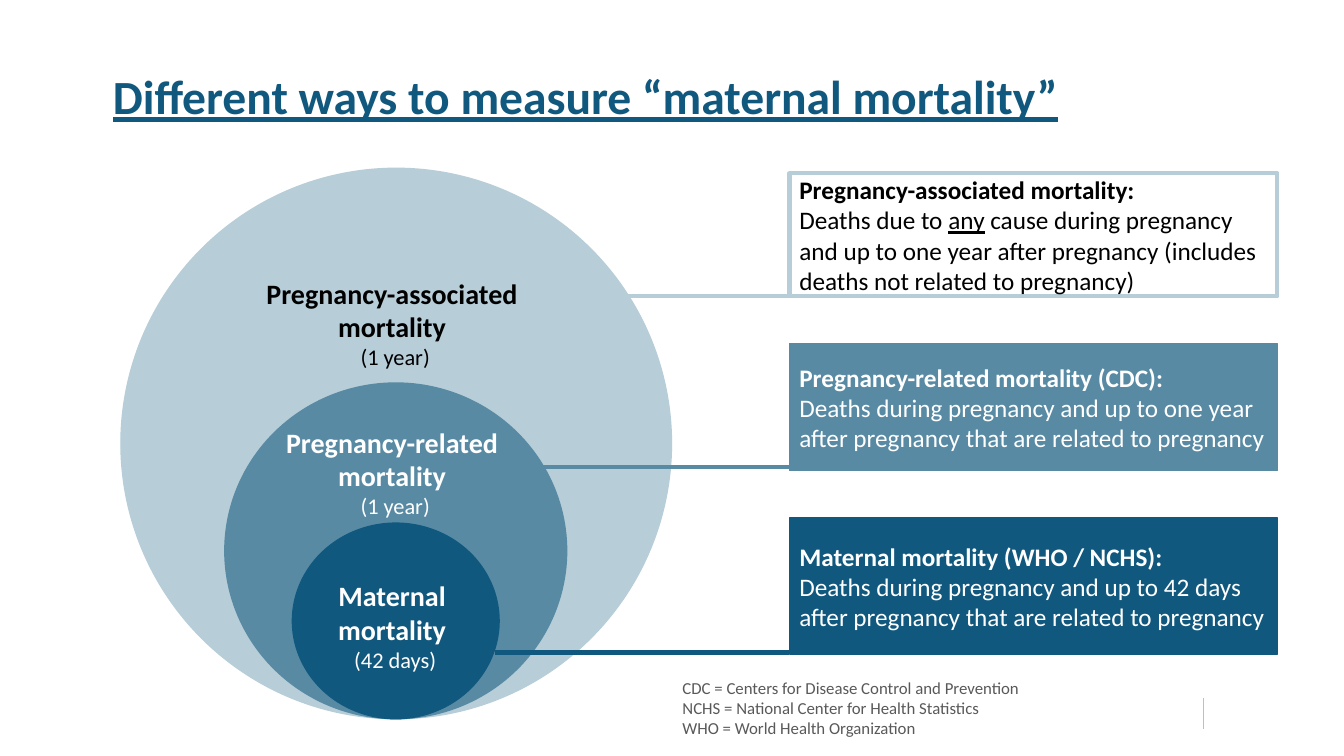
from dataclasses import dataclass

from lxml import etree
from pptx import Presentation
from pptx.dml.color import RGBColor
from pptx.enum.shapes import MSO_CONNECTOR, MSO_SHAPE
from pptx.enum.text import MSO_ANCHOR, MSO_AUTO_SIZE, PP_ALIGN
from pptx.oxml.ns import qn
from pptx.util import Pt

PX = 9144
OVAL, RECT = MSO_SHAPE.OVAL, MSO_SHAPE.RECTANGLE
LINE = MSO_CONNECTOR.STRAIGHT
MIDDLE, TOP = MSO_ANCHOR.MIDDLE, MSO_ANCHOR.TOP
LEFT, CENTER = PP_ALIGN.LEFT, PP_ALIGN.CENTER
FIXED = MSO_AUTO_SIZE.NONE


@dataclass(frozen=True)
class Theme:
    """Hold the colours, font and type sizes of the slide."""
    pale: str = "B7CDD8"
    mid: str = "588AA4"
    deep: str = "10587D"
    black: str = "000000"
    white: str = "FFFFFF"
    gray: str = "595959"
    rule: str = "BFBFBF"
    font: str = "Calibri"
    title: int = 34
    label: int = 20
    span: int = 16
    body: int = 18
    note: int = 12


THEME = Theme()


def emu(box):
    """Turn px lengths into EMU."""
    return [n * PX for n in box]


def style(para, size, color, bold=False, align=LEFT):
    """Format one paragraph."""
    para.alignment = align
    font = para.font
    font.name, font.size, font.bold = THEME.font, Pt(size), bold
    font.color.rgb = RGBColor.from_string(color)


def write(frame, rows, color, align=LEFT, anchor=TOP, wrap=True):
    """Fill a frame with rows of runs, size and weight."""
    frame.word_wrap, frame.vertical_anchor = wrap, anchor
    for i, (parts, size, bold) in enumerate(rows):
        para = frame.add_paragraph() if i else frame.paragraphs[0]
        style(para, size, color, bold, align)
        for text, under in parts:
            run = para.add_run()
            run.text = text
            if under:
                run.font.underline = True


def plain(text):
    """Give a row's runs for text without underline."""
    return [(text, False)]


def shape(slide, kind, box, fill, edge, width=1):
    """Add a flat preset shape."""
    item = slide.shapes.add_shape(kind, *emu(box))
    item.shadow.inherit = False
    if fill:
        item.fill.solid()
        item.fill.fore_color.rgb = RGBColor.from_string(fill)
    else:
        item.fill.background()
    item.line.color.rgb = RGBColor.from_string(edge)
    item.line.width = Pt(width)
    return item


def link(slide, ends, color, width):
    """Draw a straight line without shadow."""
    line = slide.shapes.add_connector(LINE, *emu(ends))
    line.line.color.rgb = RGBColor.from_string(color)
    line.line.width = Pt(width)
    etree.SubElement(line._element.spPr, qn("a:effectLst"))


def heading(slide, box, text):
    """Place and format the title."""
    title = slide.shapes.title
    title.left, title.top, title.width, title.height = emu(box)
    frame = title.text_frame
    frame.auto_size = FIXED
    write(frame, [(plain(text), THEME.title, True)], THEME.deep, anchor=MIDDLE)
    para = frame.paragraphs[0]
    para.line_spacing = 0.9
    para.font.underline = True


def rings(slide, box, items):
    """Nest ovals inside a box, each resting on its base."""
    left, top, width, height = box
    for wide, high, fill, *_ in items:
        spot = (left + (width - wide) // 2, top + height - high, wide, high)
        shape(slide, OVAL, spot, fill, fill)
    for *_, drop, tall, color, name, span in items:
        area = slide.shapes.add_textbox(*emu((left, top + drop, width - 2, tall)))
        rows = [(plain(word + " "), THEME.label, True) for word in (name, "mortality")]
        rows.append((plain(span), THEME.span, False))
        write(area.text_frame, rows, color, CENTER, wrap=False)


def card(slide, box, fill, edge, width, color, name, parts):
    """Add a definition box."""
    item = shape(slide, RECT, box, fill, edge, width)
    rows = [(plain(name), THEME.body, True), (parts, THEME.body, False)]
    write(item.text_frame, rows, color, anchor=MIDDLE)


def cards(slide, box, items):
    """Stack the definitions in a column, each tied to its oval."""
    left, top, width, _ = box
    for drop, high, reach, level, weight, tone, *rest in items:
        y = top + level
        link(slide, (left, y, reach, y), tone, weight)
        card(slide, (left, top + drop, width, high), *rest)


def notes(slide, box, lines):
    """Spell out the short names, with a thin rule beside them."""
    left, top, width, _ = box
    area = slide.shapes.add_textbox(*emu(box))
    rows = [(plain(text), THEME.note, False) for text in lines]
    write(area.text_frame, rows, THEME.gray)
    x = left + width + 56
    link(slide, (x, top + 25, x, top + 56), THEME.rule, 0.5)


def main():
    """Build the slide and save it."""
    t = THEME
    deck = Presentation()
    deck.slide_width, deck.slide_height = emu((1333, 750))
    slide = deck.slides.add_slide(deck.slide_layouts[5])
    heading(slide, (102, 38, 1165, 121), "Different ways to measure “maternal mortality”")
    rings(slide, (120, 167, 546, 546), [
        (546, 546, t.pale, 102, 135, t.black, "Pregnancy-associated", "(1 year)"),
        (339, 333, t.mid, 250, 108, t.white, "Pregnancy-related", "(1 year)"),
        (205, 194, t.deep, 402, 138, t.white, "Maternal", "(42 days)"),
    ])
    cause = [
        ("Deaths due to ", False), ("any", True),
        (" cause during pregnancy and up to one year after pregnancy "
         "(includes deaths not related to pregnancy)", False),
    ]
    during = "Deaths during pregnancy and up to {} after pregnancy that are related to pregnancy"
    cards(slide, (783, 172, 484, 477), [
        (0, 122, 607, 122, 3, t.pale, None, t.pale, 3, t.black,
         "Pregnancy-associated mortality:", cause),
        (169, 126, 515, 291, 3, t.mid, t.mid, t.mid, 1, t.white,
         "Pregnancy-related mortality (CDC):", plain(during.format("one year"))),
        (342, 135, 491, 475, 3.75, t.deep, t.deep, t.deep, 1, t.white,
         "Maternal mortality (WHO / NCHS):", plain(during.format("42 days"))),
    ])
    notes(slide, (667, 667, 471, 71), [
        "CDC = Centers for Disease Control and Prevention",
        "NCHS = National Center for Health Statistics",
        "WHO = World Health Organization",
    ])
    deck.save("out.pptx")


if __name__ == "__main__":
    main()
